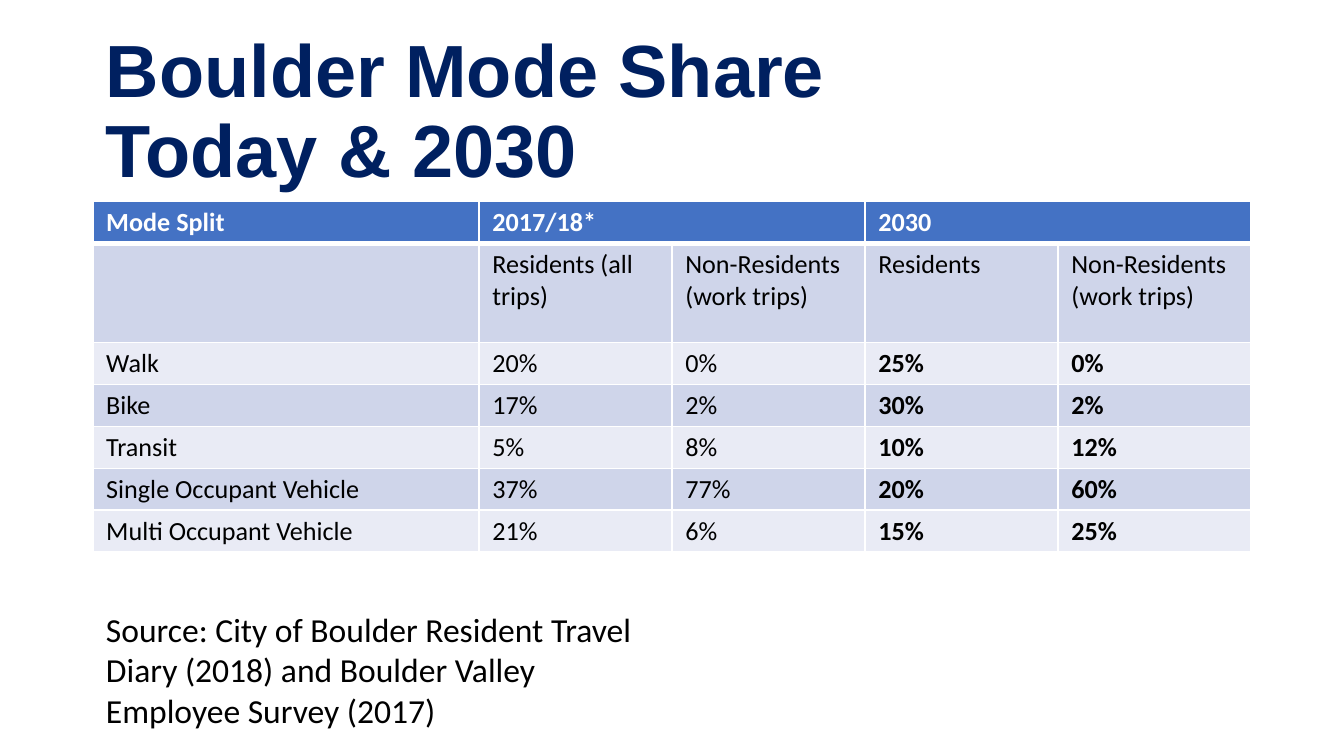
from dataclasses import dataclass

from lxml import etree
from pptx import Presentation
from pptx import util as u
from pptx.dml.color import RGBColor
from pptx.enum import text as t
from pptx.oxml import ns

COLORS = {"navy": "002060", "black": "000000", "white": "FFFFFF",
          "header": "4472C4", "band": "CFD5EA", "light": "E9EBF5"}
LEFT, WIDTH = 49.7, 620.6
COLUMN_WIDTHS = [WIDTH / 3] + [WIDTH / 6] * 4
ROW_HEIGHTS = [22.5, 53] + [22.5] * 5
MODE_SHARES = [
    ("Mode Split", "2017/18*", "", "2030", ""),
    ("", "Residents (all trips)", "Non-Residents (work trips)",
     "Residents", "Non-Residents (work trips)"),
    ("Walk", "20%", "0%", "25%", "0%"),
    ("Bike", "17%", "2%", "30%", "2%"),
    ("Transit", "5%", "8%", "10%", "12%"),
    ("Single Occupant Vehicle", "37%", "77%", "20%", "60%"),
    ("Multi Occupant Vehicle", "21%", "6%", "15%", "25%"),
]


@dataclass
class TextBlock:
    wording: str
    top: float
    width: float
    height: float
    font: dict
    color: str
    frame: dict
    line_spacing: float = 1.0


def rgb(name: str) -> RGBColor:
    return RGBColor.from_string(COLORS[name])


def apply(target, values: dict) -> None:
    for attribute, value in values.items():
        setattr(target, attribute, value)


def add_text(slide, block: TextBlock) -> None:
    box = slide.shapes.add_textbox(u.Pt(LEFT), u.Pt(block.top),
                                   u.Pt(block.width), u.Pt(block.height))
    frame = box.text_frame
    frame.text = block.wording
    apply(frame, {"word_wrap": True, **block.frame})
    paragraph = frame.paragraphs[0]
    paragraph.line_spacing = block.line_spacing
    apply(paragraph.font, block.font)
    paragraph.font.color.rgb = rgb(block.color)


def add_border(cell, side: str, points: float) -> None:
    properties = cell._tc.get_or_add_tcPr()
    line = etree.Element(ns.qn(f"a:{side}"), w=str(u.Pt(points)))
    fill = etree.SubElement(line, ns.qn("a:solidFill"))
    etree.SubElement(fill, ns.qn("a:srgbClr"), val=COLORS["white"])
    properties.append(line)


def fill_cell(cell, wording: str, row: int, column: int) -> None:
    cell.text = wording
    apply(cell, {"margin_left": u.Pt(7.2), "margin_right": u.Pt(7.2),
                 "margin_top": u.Pt(2.7), "margin_bottom": u.Pt(2.7)})
    font = cell.text_frame.paragraphs[0].font
    # Header and 2030 shares are bold
    apply(font, {"name": "Calibri", "size": u.Pt(14),
                 "bold": row == 0 or (row > 1 and column > 2)})
    font.color.rgb = rgb("white" if row == 0 else "black")
    # Borders come before the fill in the cell properties
    for side in ("lnL", "lnR", "lnT", "lnB"):
        at_header_rule = (row, side) in ((0, "lnB"), (1, "lnT"))
        add_border(cell, side, 3 if at_header_rule else 1)
    cell.fill.solid()
    cell.fill.fore_color.rgb = rgb(
        "header" if row == 0 else "band" if row % 2 else "light")


def add_mode_table(slide) -> None:
    table = slide.shapes.add_table(
        len(ROW_HEIGHTS), len(COLUMN_WIDTHS), u.Pt(LEFT), u.Pt(108),
        u.Pt(WIDTH), u.Pt(sum(ROW_HEIGHTS))).table
    for column, width in zip(table.columns, COLUMN_WIDTHS):
        column.width = u.Pt(width)
    for row, height in zip(table.rows, ROW_HEIGHTS):
        row.height = u.Pt(height)
    for row, shares in enumerate(MODE_SHARES):
        for column, wording in enumerate(shares):
            fill_cell(table.cell(row, column), wording, row, column)
    # Each year spans residents and non-residents
    for first in (1, 3):
        table.cell(0, first).merge(table.cell(0, first + 1))


def main() -> None:
    deck = Presentation()
    apply(deck, {"slide_width": u.Pt(720), "slide_height": u.Pt(405)})
    slide = deck.slides.add_slide(deck.slide_layouts[6])

    # Title
    add_text(slide, TextBlock(
        "Boulder Mode Share\vToday & 2030", 21.6, WIDTH, 78.5,
        {"name": "Arial", "size": u.Pt(39.6), "bold": True}, "navy",
        {"vertical_anchor": t.MSO_ANCHOR.MIDDLE}, 0.9))

    # Mode split by year and group
    add_mode_table(slide)

    # Source note
    add_text(slide, TextBlock(
        "Source: City of Boulder Resident Travel Diary (2018) "
        "and Boulder Valley Employee Survey (2017)", 322.6, 318.2, 72.7,
        {"name": "Calibri", "size": u.Pt(18)}, "black",
        {"auto_size": t.MSO_AUTO_SIZE.SHAPE_TO_FIT_TEXT}))

    deck.save("out.pptx")


if __name__ == "__main__":
    main()
